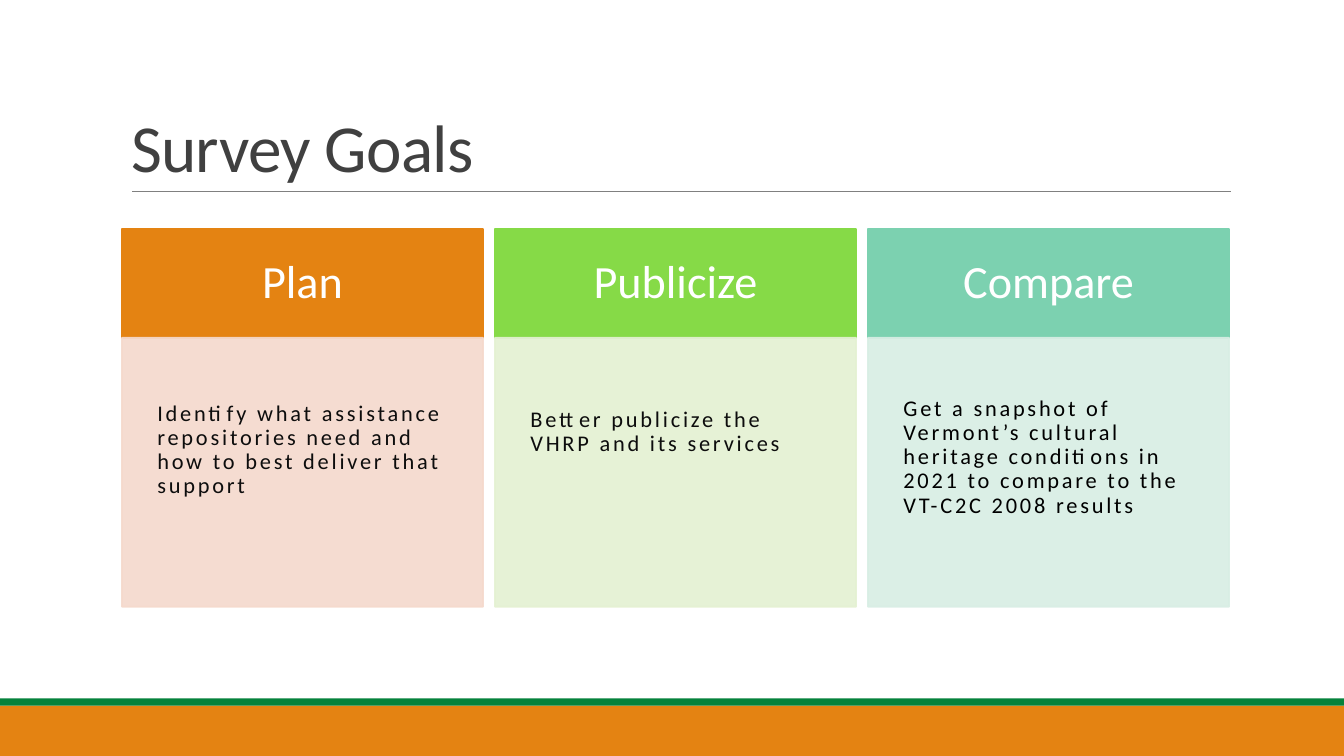
"""Build the Survey Goals slide with three headed columns."""
import pptx
import pptx.dml.color
import pptx.enum.shapes
import pptx.enum.text
import pptx.oxml
import pptx.oxml.ns
import pptx.util
from pptx.dml.color import RGBColor
from pptx.util import Inches

WHITE = RGBColor(0xFF, 0xFF, 0xFF)
BLACK = RGBColor(0x00, 0x00, 0x00)
NEAR_BLACK = RGBColor(0x0D, 0x0D, 0x0D)
DARK_GRAY = RGBColor(0x40, 0x40, 0x40)
RULE_GRAY = RGBColor(0x80, 0x80, 0x80)
ORANGE = RGBColor(0xE4, 0x83, 0x12)
DARK_GREEN = RGBColor(0x05, 0x82, 0x3B)
PEACH = RGBColor(0xF5, 0xD9, 0xCC)
LIME = RGBColor(0x86, 0xDA, 0x47)
PALE_LIME = RGBColor(0xE4, 0xF1, 0xD2)
TEAL = RGBColor(0x7C, 0xD1, 0xB0)
PALE_TEAL = RGBColor(0xD8, 0xEE, 0xE4)

FONT = "Calibri"
TITLE = "Survey Goals"
GOALS = [
    {"heading": "Plan", "color": ORANGE, "tint": PEACH, "ink": NEAR_BLACK, "top_inset": 0.64,
     "body": "Identify what assistance repositories need and how to best deliver that support"},
    {"heading": "Publicize", "color": LIME, "tint": PALE_LIME, "ink": NEAR_BLACK, "top_inset": 0.7,
     "body": "Better publicize the VHRP and its services"},
    {"heading": "Compare", "color": TEAL, "tint": PALE_TEAL, "ink": BLACK, "top_inset": 0.59,
     "body": "Get a snapshot of Vermont’s cultural heritage conditions in 2021 "
             "to compare to the VT-C2C 2008 results"},
]
FOOTER_BANDS = [(7, 0.5, ORANGE), (6.93, 0.07, DARK_GREEN)]

SLIDE_WIDTH, SLIDE_HEIGHT = 13.33, 7.5
COLUMN_LEFT, COLUMN_WIDTH, COLUMN_STEP = 1.21, 3.58, 3.7
HEADING_TOP, HEADING_HEIGHT, BODY_HEIGHT = 2.27, 1.08, 2.67


def write_text(shape, text, size, color, insets, line_spacing, align="LEFT", anchor="TOP", tracking=0):
    """Put one formatted paragraph into a shape; insets run left, top, right, bottom."""
    frame = shape.text_frame
    frame.word_wrap = True
    frame.auto_size = pptx.enum.text.MSO_AUTO_SIZE.NONE
    frame.vertical_anchor = pptx.enum.text.MSO_ANCHOR[anchor]
    frame.margin_left, frame.margin_top, frame.margin_right, frame.margin_bottom = map(Inches, insets)
    paragraph = frame.paragraphs[0]
    paragraph.alignment = pptx.enum.text.PP_ALIGN[align]
    paragraph.line_spacing = line_spacing
    run = paragraph.add_run()
    run.text = text
    run.font.name = FONT
    run.font.size = pptx.util.Pt(size)
    run.font.color.rgb = color
    if tracking:
        run._r.get_or_add_rPr().set("spc", str(int(tracking * 100)))


def add_block(slide, left, top, width, height, color, outlined=False, opacity=100):
    """Add a flat rectangle, optionally outlined in its own colour."""
    shape = slide.shapes.add_shape(
        pptx.enum.shapes.MSO_SHAPE.RECTANGLE, Inches(left), Inches(top), Inches(width), Inches(height))
    shape.shadow.inherit = False
    shape.fill.solid()
    shape.fill.fore_color.rgb = color
    if outlined:
        shape.line.color.rgb = color
        shape.line.width = pptx.util.Pt(1.25)
    else:
        shape.line.fill.background()
    if opacity < 100:
        for color_element in shape._element.spPr.iter(pptx.oxml.ns.qn("a:srgbClr")):
            alpha = pptx.oxml.parse_xml(f'<a:alpha {pptx.oxml.ns.nsdecls("a")} val="{opacity * 1000}"/>')
            color_element.append(alpha)
    return shape


def add_goal(slide, index, goal):
    """Add one column: a coloured heading above a tinted body."""
    left = COLUMN_LEFT + index * COLUMN_STEP
    heading = add_block(slide, left, HEADING_TOP, COLUMN_WIDTH, HEADING_HEIGHT, goal["color"], outlined=True)
    write_text(heading, goal["heading"], size=33, color=WHITE, insets=[0.28] * 4,
               line_spacing=0.9, align="CENTER", anchor="MIDDLE")
    body = add_block(slide, left, HEADING_TOP + HEADING_HEIGHT, COLUMN_WIDTH, BODY_HEIGHT,
                     goal["tint"], outlined=True, opacity=90)
    write_text(body, goal["body"], size=16, color=goal["ink"],
               insets=[0.35, goal["top_inset"], 0.35, 0.35], line_spacing=0.9, tracking=2)


def main():
    """Assemble and save the slide."""
    presentation = pptx.Presentation()
    presentation.slide_width = Inches(SLIDE_WIDTH)
    presentation.slide_height = Inches(SLIDE_HEIGHT)
    slide = presentation.slides.add_slide(presentation.slide_layouts.get_by_name("Title Only"))

    for top, height, color in FOOTER_BANDS:
        add_block(slide, 0, top, SLIDE_WIDTH, height, color)

    rule = slide.shapes.add_connector(
        pptx.enum.shapes.MSO_CONNECTOR.STRAIGHT, Inches(1.31), Inches(1.9), Inches(12.21), Inches(1.9))
    rule.line.color.rgb = RULE_GRAY
    rule.line.width = pptx.util.Pt(0.5)
    rule._element.spPr.append(pptx.oxml.parse_xml(f'<a:effectLst {pptx.oxml.ns.nsdecls("a")}/>'))

    title = slide.shapes.title
    title.left, title.top, title.width, title.height = map(Inches, (1.2, 0.31, 11, 1.59))
    write_text(title, TITLE, size=48, color=DARK_GRAY, insets=[0.1, 0.05, 0.1, 0.05],
               line_spacing=0.85, anchor="BOTTOM", tracking=-0.5)

    for index, goal in enumerate(GOALS):
        add_goal(slide, index, goal)

    presentation.save("out.pptx")


if __name__ == "__main__":
    main()
